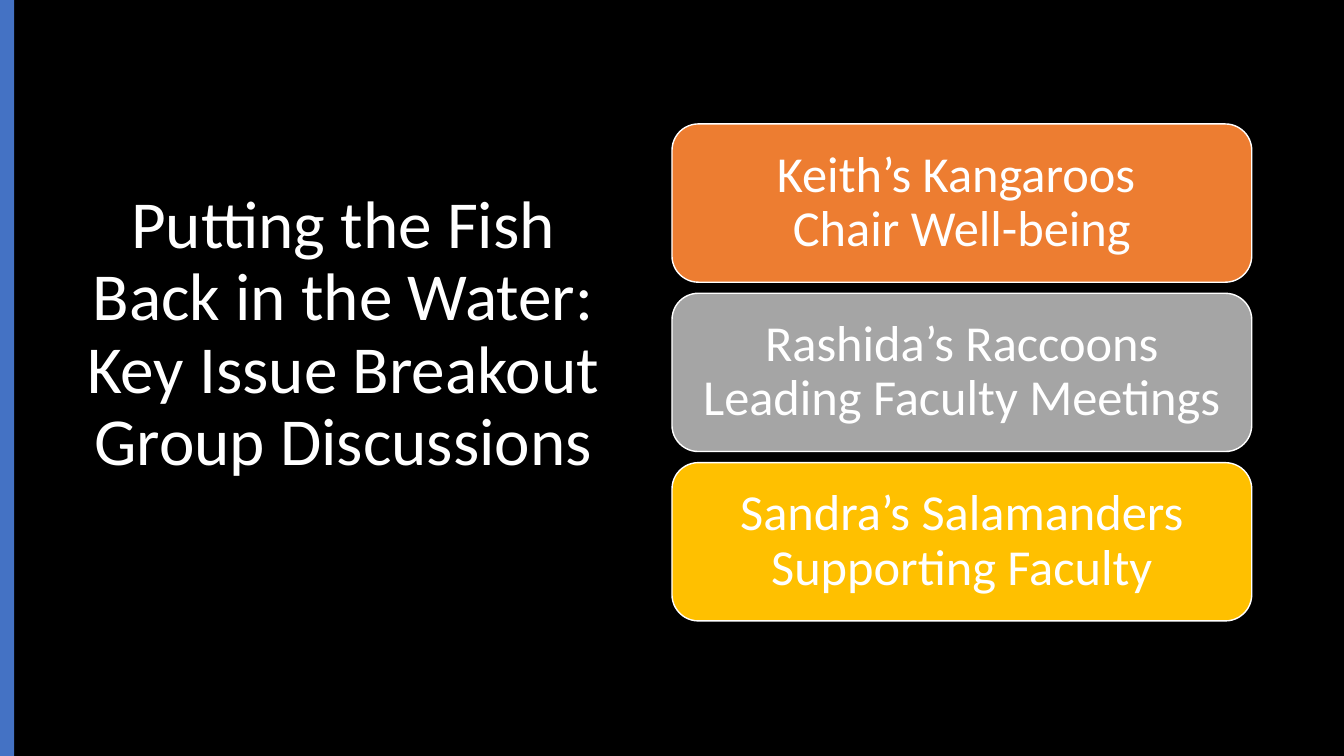
from pptx import Presentation
from pptx.dml.color import RGBColor
from pptx.enum.shapes import MSO_SHAPE
from pptx.enum.text import MSO_ANCHOR, PP_ALIGN
from pptx.util import Inches, Pt

RECT = MSO_SHAPE.RECTANGLE
ROUND = MSO_SHAPE.ROUNDED_RECTANGLE
MIDDLE = MSO_ANCHOR.MIDDLE
CENTER = PP_ALIGN.CENTER

THEME = {
    "font": "Calibri",
    "back": RGBColor.from_string("000000"),
    "text": RGBColor.from_string("FFFFFF"),
    "bar": RGBColor.from_string("4472C4"),
    "cards": [RGBColor.from_string(c) for c in ("ED7D31", "A5A5A5", "FFC000")],
    "title": Pt(48),
    "body": Pt(36),
    "line": Pt(1),
}
WIDE, HIGH = 13.33, 7.5
LEFT, TOP = WIDE / 2, 1.23
CARD_W, CARD_H, STEP = 5.75, 1.57, 1.68
PAD = Inches(0.23)

GROUPS = [
    ["Keith’s Kangaroos ", "Chair Well-being"],
    ["Rashida’s Raccoons Leading Faculty Meetings"],
    ["Sandra’s Salamanders Supporting Faculty"],
]


def write(frame, lines, size):
    frame.word_wrap = True
    frame.vertical_anchor = MIDDLE
    for i, line in enumerate(lines):
        para = frame.add_paragraph() if i else frame.paragraphs[0]
        para.alignment = CENTER
        para.line_spacing = 0.9
        run = para.add_run()
        run.text = line
        run.font.name = THEME["font"]
        run.font.size = size
        run.font.color.rgb = THEME["text"]


def block(kind, x, y, w, h, fill):
    shape = slide.shapes.add_shape(kind, Inches(x), Inches(y), Inches(w), Inches(h))
    shape.shadow.inherit = False
    shape.fill.solid()
    shape.fill.fore_color.rgb = fill
    shape.line.fill.background()
    return shape


deck = Presentation()
deck.slide_width = Inches(WIDE)
deck.slide_height = Inches(HIGH)
slide = deck.slides.add_slide(deck.slide_layouts[6])
slide.background.fill.solid()
slide.background.fill.fore_color.rgb = THEME["back"]

title = slide.shapes.add_textbox(Inches(0.57), Inches(0.68), Inches(5.67), Inches(6.02))
title.text_frame.margin_bottom = Inches(0.78)
write(
    title.text_frame,
    ["Putting the Fish Back in the Water: Key Issue Breakout Group Discussions"],
    THEME["title"],
)

block(RECT, 0, 0, 0.14, HIGH, THEME["bar"])

for row, (lines, fill) in enumerate(zip(GROUPS, THEME["cards"])):
    card = block(ROUND, LEFT, TOP + row * STEP, CARD_W, CARD_H, fill)
    card.line.color.rgb = THEME["text"]
    card.line.width = THEME["line"]
    frame = card.text_frame
    frame.margin_left = frame.margin_right = PAD
    frame.margin_top = frame.margin_bottom = PAD
    write(frame, lines, THEME["body"])

deck.save("out.pptx")
